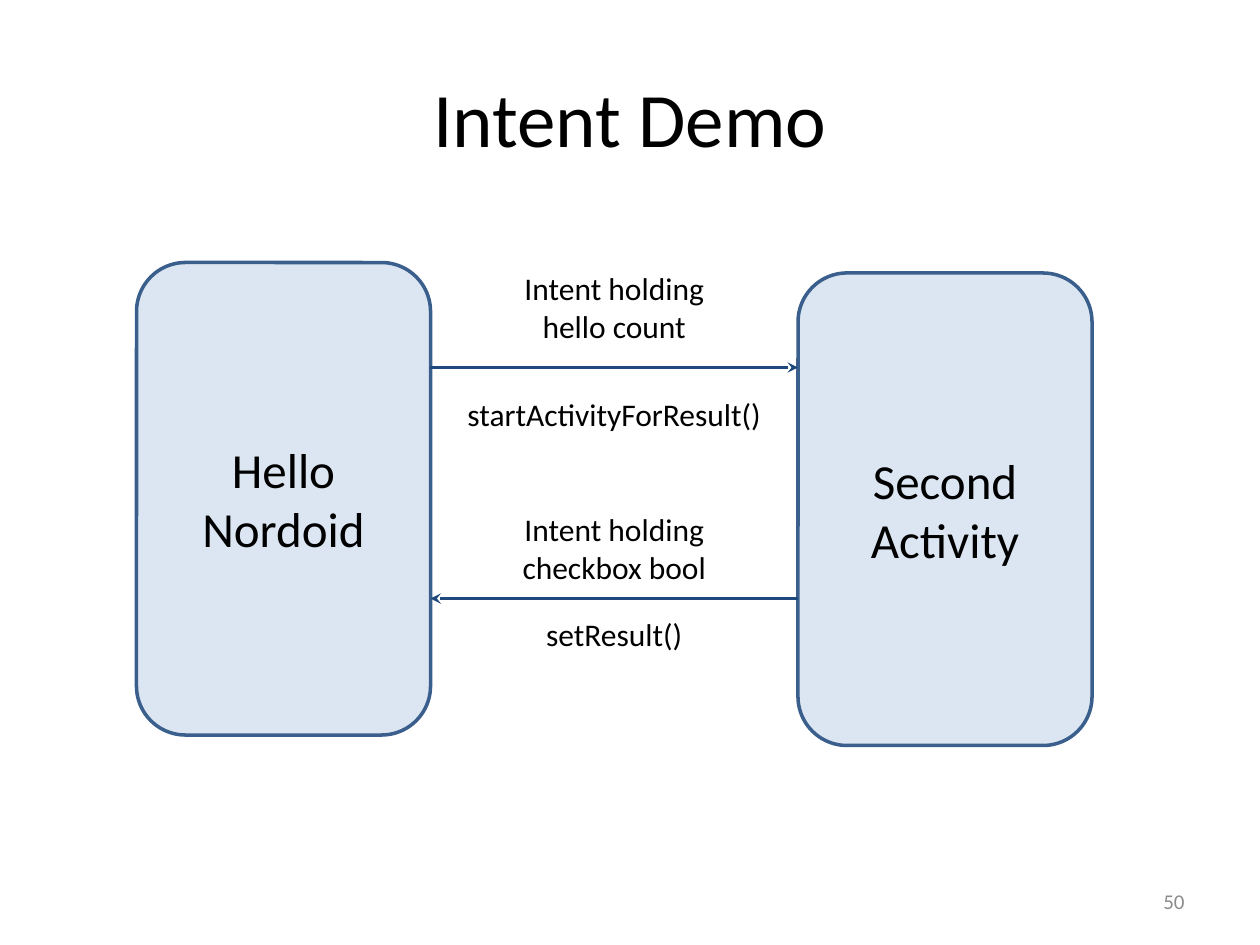
from lxml import etree
from pptx import Presentation
from pptx import util as u
from pptx.dml.color import RGBColor
from pptx.enum import shapes, text
from pptx.oxml.ns import qn

FONT = "Calibri"
BLACK, GRAY = "000000", "8C8C8C"
BOX_FILL, BOX_LINE, ARROW = "DCE6F2", "3A5F8C", "1F497D"
LEFT_BOX, RIGHT_BOX, BOX_WIDTH, BOX_HEIGHT = 78, 456, 168, 270
CENTER, MIDDLE = text.PP_ALIGN.CENTER, text.MSO_ANCHOR.MIDDLE


def color(hex_string):
    return RGBColor.from_string(hex_string)


def write(shape, words, size, hex_string=BLACK, align=CENTER, anchor=MIDDLE):
    frame = shape.text_frame
    frame.word_wrap = True
    frame.vertical_anchor = anchor
    frame.text = words
    for paragraph in frame.paragraphs:
        paragraph.alignment = align
        for run in paragraph.runs:
            run.font.name = FONT
            run.font.size = u.Pt(size)
            run.font.color.rgb = color(hex_string)


def add_label(slide, box, words, size, **style):
    shape = slide.shapes.add_textbox(*map(u.Pt, box))
    write(shape, words, size, **style)
    return shape


def add_caption(slide, left, top, width, height, words):
    shape = add_label(slide, (left, top, width, height), words, 18,
                      anchor=text.MSO_ANCHOR.TOP)
    shape.text_frame.auto_size = text.MSO_AUTO_SIZE.SHAPE_TO_FIT_TEXT


def add_activity(slide, left, top, words):
    shape = slide.shapes.add_shape(
        shapes.MSO_SHAPE.ROUNDED_RECTANGLE,
        u.Pt(left), u.Pt(top), u.Pt(BOX_WIDTH), u.Pt(BOX_HEIGHT))
    shape.shadow.inherit = False
    shape.fill.solid()
    shape.fill.fore_color.rgb = color(BOX_FILL)
    shape.line.color.rgb = color(BOX_LINE)
    shape.line.width = u.Pt(2)
    write(shape, words, 28)


def add_arrow(slide, start, end, y):
    connector = slide.shapes.add_connector(
        shapes.MSO_CONNECTOR.STRAIGHT, u.Pt(start), u.Pt(y), u.Pt(end), u.Pt(y))
    connector.line.color.rgb = color(ARROW)
    connector.line.width = u.Pt(2)
    etree.SubElement(connector.line._get_or_add_ln(), qn("a:tailEnd"), type="stealth")
    etree.SubElement(connector._element.spPr, qn("a:effectLst"))


def add_message(slide, start, end, y, payload, payload_top, call, call_top):
    """Arrow with the intent's content above it and the method call below."""
    add_arrow(slide, start, end, y)
    add_caption(slide, 288, payload_top, 126, 51, payload)
    add_caption(slide, 258, call_top, 186, 29, call)


def main():
    presentation = Presentation()
    presentation.slide_width, presentation.slide_height = u.Pt(720), u.Pt(540)
    slide = presentation.slides.add_slide(presentation.slide_layouts[6])

    add_label(slide, (36, 21.6, 648, 90), "Intent Demo", 44)
    add_label(slide, (516, 500.5, 168, 28.8), "50", 12,
              hex_string=GRAY, align=text.PP_ALIGN.RIGHT)

    add_activity(slide, LEFT_BOX, 150, "Hello\nNordoid")
    add_activity(slide, RIGHT_BOX, 156, "Second\nActivity")

    left_edge = LEFT_BOX + BOX_WIDTH
    add_message(slide, left_edge, RIGHT_BOX, 210,
                "Intent holding hello count", 150, "startActivityForResult()", 222)
    add_message(slide, RIGHT_BOX, left_edge, 342,
                "Intent holding\ncheckbox bool", 288, "setResult()", 348)

    presentation.save("out.pptx")


if __name__ == "__main__":
    main()
